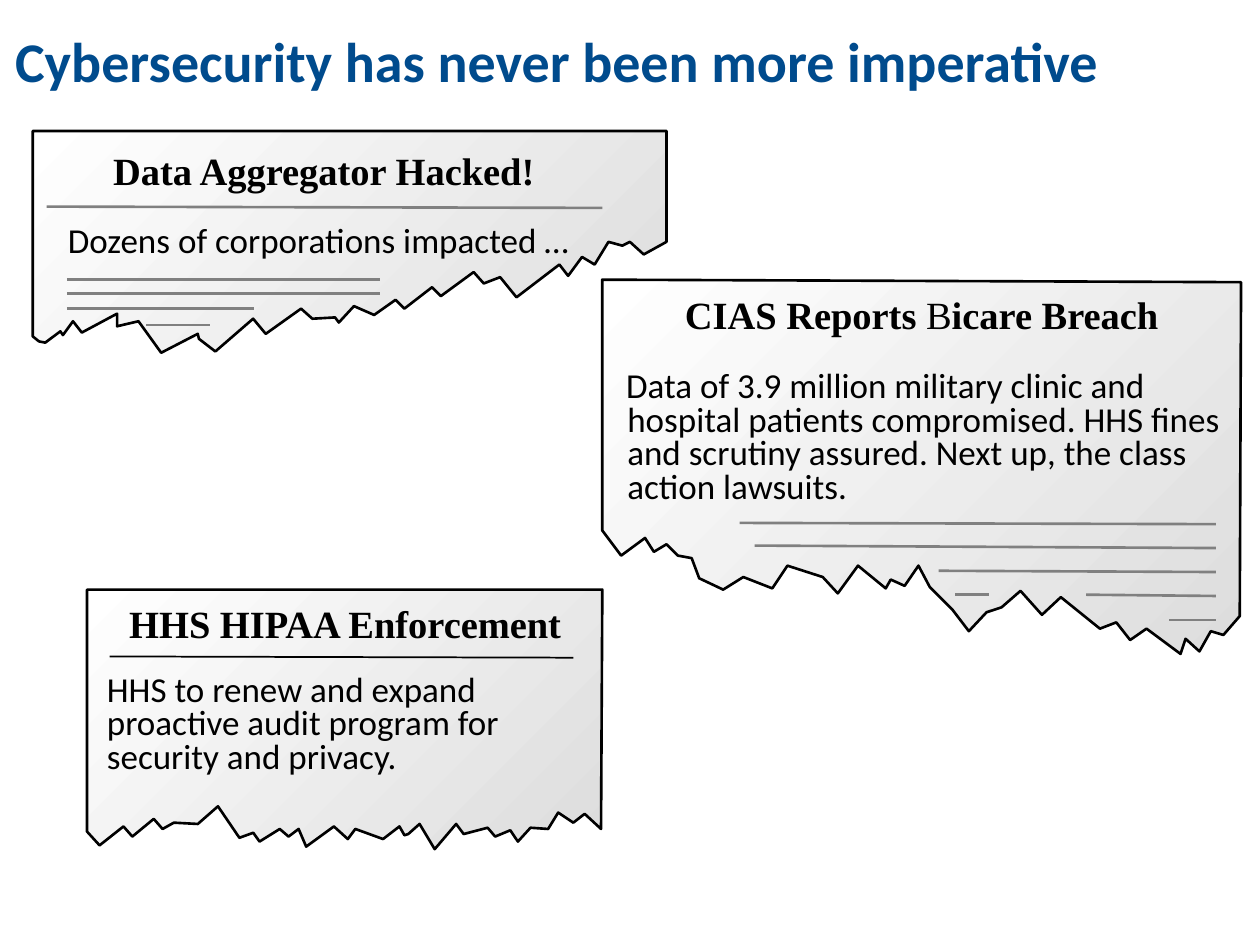
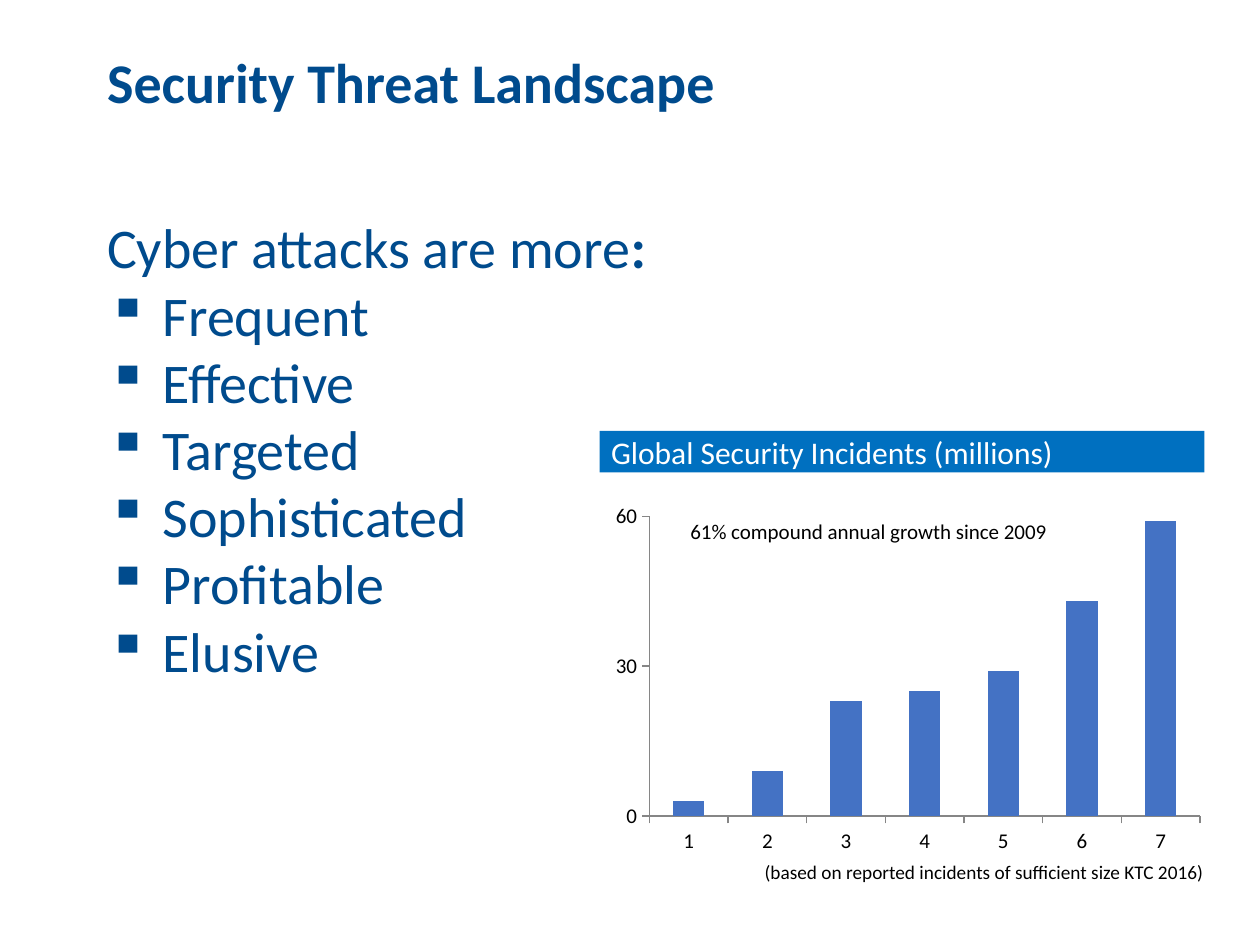
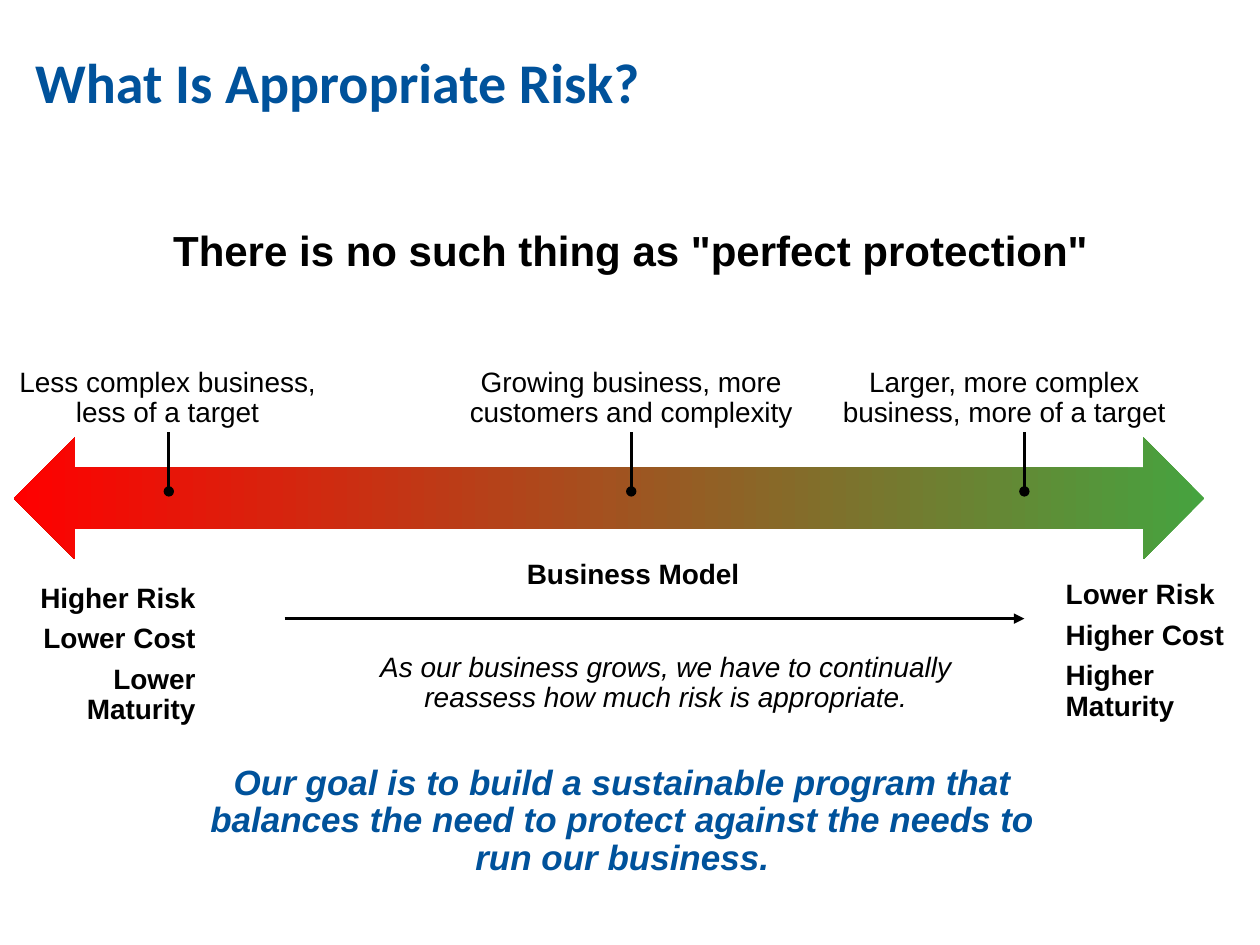
from dataclasses import dataclass

import pptx
import pptx.chart.data
import pptx.dml.color
import pptx.enum.chart
import pptx.enum.shapes
import pptx.enum.text
import pptx.oxml
import pptx.oxml.ns
import pptx.util
from pptx.util import Inches

ALIGN = pptx.enum.text.PP_ALIGN
ANCHOR = pptx.enum.text.MSO_ANCHOR
SHAPE = pptx.enum.shapes.MSO_SHAPE
NO_INSET = (0, 0.1, 0, 0)
SNUG_INSET = (0.09, 0.04, 0.09, 0.04)


@dataclass(frozen=True)
class Theme:
    body_font: str = "Calibri"
    headline_font: str = "Times New Roman"
    diagram_font: str = "Arial"
    navy: str = "004B8D"
    blue: str = "00529B"
    banner: str = "0070C0"
    bars: str = "4472C4"
    black: str = "000000"
    grey: str = "808080"
    axis: str = "868686"
    white: str = "FFFFFF"
    paper: str = "DDDDDD"
    high_risk: str = "FF0000"
    low_risk: str = "46A33F"
    title: int = 32
    statement: int = 24
    headline: int = 22
    body: int = 20
    banner_text: int = 18
    label: int = 16
    note: int = 12
    source: int = 11


def rgb(value):
    return pptx.dml.color.RGBColor.from_string(value)


def add_xml(parent, tag, **attributes):
    element = pptx.oxml.parse_xml(f"<a:{tag} {pptx.oxml.ns.nsdecls('a')}/>")
    for name, value in attributes.items():
        element.set(name, str(value))
    parent.append(element)


class SlideBuilder:
    def __init__(self, deck, theme):
        self.deck = deck
        self.theme = theme

    def start_page(self):
        self.page = self.deck.slides.add_slide(self.deck.slide_layouts[6])
        self.shapes = self.page.shapes

    def start_group(self):
        """Send the elements that follow into a new group."""
        self.shapes = self.page.shapes.add_group_shape().shapes

    def fill_text(self, frame, paragraphs, size, font=None, color=None, bold=False,
                  italic=False, align=ALIGN.LEFT, anchor=ANCHOR.TOP, wrap=True,
                  inset=(0.1, 0.05, 0.1, 0.05), spacing=1.0, before=0, after=0,
                  indent=0, bullet=None):
        """Fill a text frame; a paragraph is a string or a tuple of (text, bold)."""
        frame.word_wrap = wrap
        frame.vertical_anchor = anchor
        (frame.margin_left, frame.margin_top,
         frame.margin_right, frame.margin_bottom) = map(Inches, inset)
        for number, content in enumerate(paragraphs):
            para = frame.add_paragraph() if number else frame.paragraphs[0]
            if isinstance(content, str):
                para.text = content
                weights = [bold] * len(para.runs)
            else:
                weights = [weight for _, weight in content]
                for words, _ in content:
                    para.add_run().text = words
            para.alignment = align
            para.line_spacing = spacing
            para.space_before = pptx.util.Pt(before)
            para.space_after = pptx.util.Pt(after)
            bulleted = bullet and number
            if indent and (bulleted or not bullet):
                properties = para._p.get_or_add_pPr()
                properties.set("marL", str(Inches(indent)))
                properties.set("indent", str(-Inches(indent)))
                if bulleted:
                    add_xml(properties, "buChar", char=bullet)
            for span, weight in zip(para.runs, weights):
                span.font.name = font or self.theme.body_font
                span.font.size = pptx.util.Pt(size)
                span.font.bold = weight
                span.font.italic = italic
                span.font.color.rgb = rgb(color or self.theme.black)

    def text(self, at, paragraphs, size, **style):
        box = self.shapes.add_textbox(*map(Inches, at))
        self.fill_text(box.text_frame, paragraphs, size, **style)

    def title(self, at, words, color, inset=NO_INSET, anchor=ANCHOR.TOP):
        self.text(at, [words], self.theme.title, color=color, bold=True,
                  inset=inset, anchor=anchor, spacing=0.9)

    def label(self, at, paragraphs, size=None, align=ALIGN.CENTER,
              anchor=ANCHOR.BOTTOM, **style):
        self.text(at, paragraphs, size or self.theme.label, align=align,
                  anchor=anchor, font=self.theme.diagram_font, spacing=0.9, **style)

    def gradient(self, shape, first, last, angle):
        shape.shadow.inherit = False
        shape.fill.gradient()
        shape.fill.gradient_angle = angle
        for stop, color in zip(shape.fill.gradient_stops, (first, last)):
            stop.color.rgb = rgb(color)

    def line(self, start, end, color, width, tail=None):
        connector = self.shapes.add_connector(
            pptx.enum.shapes.MSO_CONNECTOR.STRAIGHT, *map(Inches, start + end))
        connector.line.color.rgb = rgb(color)
        connector.line.width = pptx.util.Pt(width)
        if tail:
            add_xml(connector.line._get_or_add_ln(), "tailEnd", type=tail)
        add_xml(connector._element.spPr, "effectLst")

    def clipping(self, outline, headline_at, headline, story_at, story, story_indent=0):
        """Draw a torn newspaper clipping as a group of its own."""
        self.start_group()
        points = [(Inches(x), Inches(y)) for x, y in outline]
        builder = self.shapes.build_freeform(*points[0])
        builder.add_line_segments(points[1:], close=True)
        paper = builder.convert_to_shape()
        self.gradient(paper, self.theme.white, self.theme.paper, 315)
        paper.line.color.rgb = rgb(self.theme.black)
        paper.line.width = pptx.util.Pt(1.5)
        self.text(headline_at, [headline], self.theme.headline, bold=True,
                  font=self.theme.headline_font, align=ALIGN.CENTER, indent=0.31,
                  spacing=0.8, before=6.6, after=2.2)
        self.text(story_at, [story], self.theme.body, indent=story_indent,
                  spacing=0.8, before=6, after=2)

    def banner(self, at, words):
        bar = self.shapes.add_shape(SHAPE.RECTANGLE, *map(Inches, at))
        bar.shadow.inherit = False
        bar.fill.solid()
        bar.fill.fore_color.rgb = rgb(self.theme.banner)
        bar.line.fill.background()
        self.fill_text(bar.text_frame, [words], self.theme.banner_text,
                       color=self.theme.white, anchor=ANCHOR.MIDDLE, inset=SNUG_INSET)

    def column_chart(self, at, values, top, step):
        data = pptx.chart.data.CategoryChartData()
        data.categories = [str(number + 1) for number in range(len(values))]
        data.add_series("Series 1", values)
        chart = self.shapes.add_chart(
            pptx.enum.chart.XL_CHART_TYPE.COLUMN_CLUSTERED, *map(Inches, at), data).chart
        chart.has_legend = False
        chart.has_title = False
        chart.font.name = self.theme.body_font
        chart.font.size = pptx.util.Pt(self.theme.banner_text)
        chart.font.color.rgb = rgb(self.theme.black)
        plot = chart.plots[0]
        plot.gap_width = 150
        plot.vary_by_categories = False
        bars = plot.series[0].format.fill
        bars.solid()
        bars.fore_color.rgb = rgb(self.theme.bars)
        for axis in (chart.category_axis, chart.value_axis):
            axis.has_major_gridlines = False
            axis.major_tick_mark = pptx.enum.chart.XL_TICK_MARK.OUTSIDE
            axis.tick_labels.font.size = pptx.util.Pt(self.theme.note)
            axis.format.line.color.rgb = rgb(self.theme.axis)
        chart.value_axis.minimum_scale = 0
        chart.value_axis.maximum_scale = top
        chart.value_axis.major_unit = step


ENFORCEMENT_TEAR = [
    (0.69, 6.6), (0.69, 4.68), (4.78, 4.68), (4.77, 6.58), (4.64, 6.46), (4.55, 6.53),
    (4.43, 6.45), (4.35, 6.58), (4.21, 6.57), (4.11, 6.68), (4.05, 6.59), (3.93, 6.64),
    (3.87, 6.57), (3.68, 6.62), (3.62, 6.54), (3.45, 6.74), (3.33, 6.54), (3.24, 6.62),
    (3.21, 6.63), (3.17, 6.56), (3.04, 6.66), (2.82, 6.58), (2.76, 6.66), (2.65, 6.56),
    (2.43, 6.72), (2.37, 6.58), (2.29, 6.64), (2.22, 6.58), (2.06, 6.68), (2.01, 6.61),
    (1.9, 6.65), (1.73, 6.4), (1.57, 6.54), (1.38, 6.53), (1.29, 6.58), (1.22, 6.5),
    (1.05, 6.64), (0.98, 6.56), (0.79, 6.71)]
BREACH_TEAR = [
    (9.84, 4.89), (9.85, 2.24), (4.78, 2.22), (4.78, 4.21), (4.93, 4.41), (5.12, 4.27),
    (5.19, 4.38), (5.29, 4.32), (5.38, 4.41), (5.49, 4.43), (5.55, 4.59), (5.74, 4.68),
    (5.9, 4.58), (6.13, 4.67), (6.25, 4.49), (6.53, 4.58), (6.65, 4.71), (6.81, 4.49),
    (7.03, 4.67), (7.07, 4.6), (7.18, 4.65), (7.29, 4.49), (7.38, 4.66), (7.56, 4.84),
    (7.69, 5.01), (7.83, 4.86), (7.95, 4.82), (8.1, 4.69), (8.27, 4.88), (8.42, 4.74),
    (8.73, 4.99), (8.86, 4.94), (8.97, 5.08), (9.1, 4.99), (9.37, 5.19), (9.41, 5.07),
    (9.52, 5.17), (9.61, 5.01), (9.71, 5.04)]
HACK_TEAR = [
    (0.26, 2.67), (0.26, 1.04), (5.29, 1.04), (5.29, 1.92), (5.11, 2.02), (5, 1.92),
    (4.94, 1.95), (4.83, 1.92), (4.72, 2.1), (4.62, 2.04), (4.51, 2.19), (4.44, 2.1),
    (4.1, 2.36), (3.97, 2.2), (3.84, 2.25), (3.76, 2.16), (3.5, 2.35), (3.43, 2.28),
    (3.21, 2.45), (3.14, 2.38), (2.97, 2.5), (2.81, 2.43), (2.69, 2.56), (2.66, 2.52),
    (2.48, 2.53), (2.39, 2.45), (2.11, 2.65), (2.01, 2.53), (1.71, 2.79), (1.58, 2.69),
    (1.57, 2.65), (1.28, 2.8), (1.1, 2.55), (0.93, 2.59), (0.93, 2.49), (0.65, 2.64),
    (0.58, 2.55), (0.5, 2.66), (0.48, 2.63), (0.36, 2.72), (0.31, 2.71)]


def build_headlines(slide):
    theme = slide.theme
    slide.start_page()
    slide.title((0.12, 0.17, 9.73, 0.59),
                "Cybersecurity has never been more imperative", theme.navy)

    slide.clipping(
        ENFORCEMENT_TEAR, (0.82, 4.78, 3.84, 0.48), "HHS HIPAA Enforcement",
        (0.75, 5.31, 3.98, 1.23),
        "HHS to renew and expand proactive audit program for security and privacy.")
    slide.line((0.87, 5.21), (4.55, 5.22), theme.black, 1)

    slide.clipping(
        BREACH_TEAR, (5.25, 2.33, 4.13, 0.49),
        (("CIAS Reports ", True), ("B", False), ("icare Breach", True)),
        (4.87, 2.9, 4.95, 1.09),
        "Data of 3.9 million military clinic and hospital patients compromised. "
        "HHS fines and scrutiny assured. Next up, the class action lawsuits.", 0.01)
    for left, right, y, drop in [
            (5.87, 9.65, 4.15, 0.01), (5.99, 9.65, 4.33, 0.02), (7.45, 9.65, 4.53, 0.01),
            (8.62, 9.65, 4.72, 0.01), (9.28, 9.65, 4.92, 0), (7.58, 7.85, 4.72, 0)]:
        slide.line((left, y), (right, y + drop), theme.grey, 1.5)

    slide.clipping(
        HACK_TEAR, (0.26, 1.19, 4.62, 0.48), "Data Aggregator Hacked!",
        (0.44, 1.75, 4.72, 0.43), "Dozens of corporations impacted …", 0.31)
    for left, right, y, drop in [
            (0.37, 4.78, 1.64, 0.01), (0.53, 3.02, 2.22, 0), (0.53, 3.02, 2.33, 0),
            (0.53, 2.02, 2.45, 0), (1.16, 1.67, 2.58, 0)]:
        slide.line((left, y), (right, y + drop), theme.grey, 1.5)


def build_threats(slide):
    theme = slide.theme
    slide.start_page()
    slide.title((0.76, 0.26, 8.81, 0.84), "Security Threat Landscape", theme.navy,
                SNUG_INSET, ANCHOR.MIDDLE)
    slide.text((0.76, 1.65, 8.23, 3.86),
               [(("Cyber attacks are more", False), (":", True)), "Frequent", "Effective",
                "Targeted", "Sophisticated", "Profitable", "Elusive"],
               theme.title, color=theme.navy, inset=SNUG_INSET, indent=0.44, bullet="▪")
    slide.banner((4.76, 3.42, 4.8, 0.33), "Global Security Incidents (millions)")
    slide.column_chart((4.79, 3.94, 4.83, 2.89), (3, 9, 23, 25, 29, 43, 59), 60, 30)
    slide.text((5.97, 6.78, 3.78, 0.29),
               ["(based on reported incidents of sufficient size KTC 2016)"],
               theme.source, wrap=False)
    slide.text((5.38, 4.07, 3.15, 0.3), ["61% compound annual growth since 2009"],
               theme.note, wrap=False)


def build_risk(slide):
    theme = slide.theme
    slide.start_page()
    slide.title((0.28, 0.34, 8.76, 0.59), "What Is Appropriate Risk?", theme.blue)
    slide.label((1.24, 1.83, 7.53, 0.41),
                ['There is no such thing as "perfect protection"'], theme.statement,
                bold=True, anchor=ANCHOR.TOP, wrap=False, inset=(0.1, 0, 0.1, 0.05))

    arrow = slide.shapes.add_shape(SHAPE.LEFT_RIGHT_ARROW,
                                   *map(Inches, (0.11, 3.47, 9.45, 0.97)))
    slide.gradient(arrow, theme.low_risk, theme.high_risk, 180)
    arrow.line.fill.background()

    for marker, left, width, wrap, words in [
            (1.34, 0.04, 2.58, False, ["Less complex business,\vless of a target"]),
            (5.01, 3.61, 2.8, False, ["Growing business, more\vcustomers and complexity"]),
            (8.13, 6.53, 2.88, True, ["Larger, more complex", "business, more of a target"])]:
        slide.line((marker, 3.43), (marker, 3.9), theme.black, 1.5, "oval")
        slide.label((left, 2.86, width, 0.59), words, wrap=wrap)

    for at, align, words in [
            ((0.04, 4.57, 1.61, 1.24), ALIGN.RIGHT,
             ["Higher Risk", "Lower Cost", "Lower Maturity"]),
            ((8.36, 4.54, 1.65, 1.24), ALIGN.LEFT,
             ["Lower Risk", "Higher Cost", "Higher Maturity"])]:
        slide.label(at, words, align=align, bold=True, before=6)

    slide.line((2.26, 4.91), (8.13, 4.91), theme.black, 2, "triangle")
    slide.label((4.07, 4.4, 1.91, 0.34), ["Business Model"], bold=True, wrap=False)
    slide.label((2.7, 5.12, 5.17, 0.59),
                ["As our business grows, we have to continually reassess "
                 "how much risk is appropriate."], italic=True)
    slide.label((1.34, 6.01, 7.2, 1.01),
                ["Our goal is to build a sustainable program that balances the need "
                 "to protect against the needs to run our business."],
                theme.body, color=theme.blue, bold=True, italic=True)


def main():
    deck = pptx.Presentation()
    deck.slide_width = Inches(10)
    deck.slide_height = Inches(7.5)
    slide = SlideBuilder(deck, Theme())
    build_headlines(slide)
    build_threats(slide)
    build_risk(slide)
    deck.save("out.pptx")


if __name__ == "__main__":
    main()
